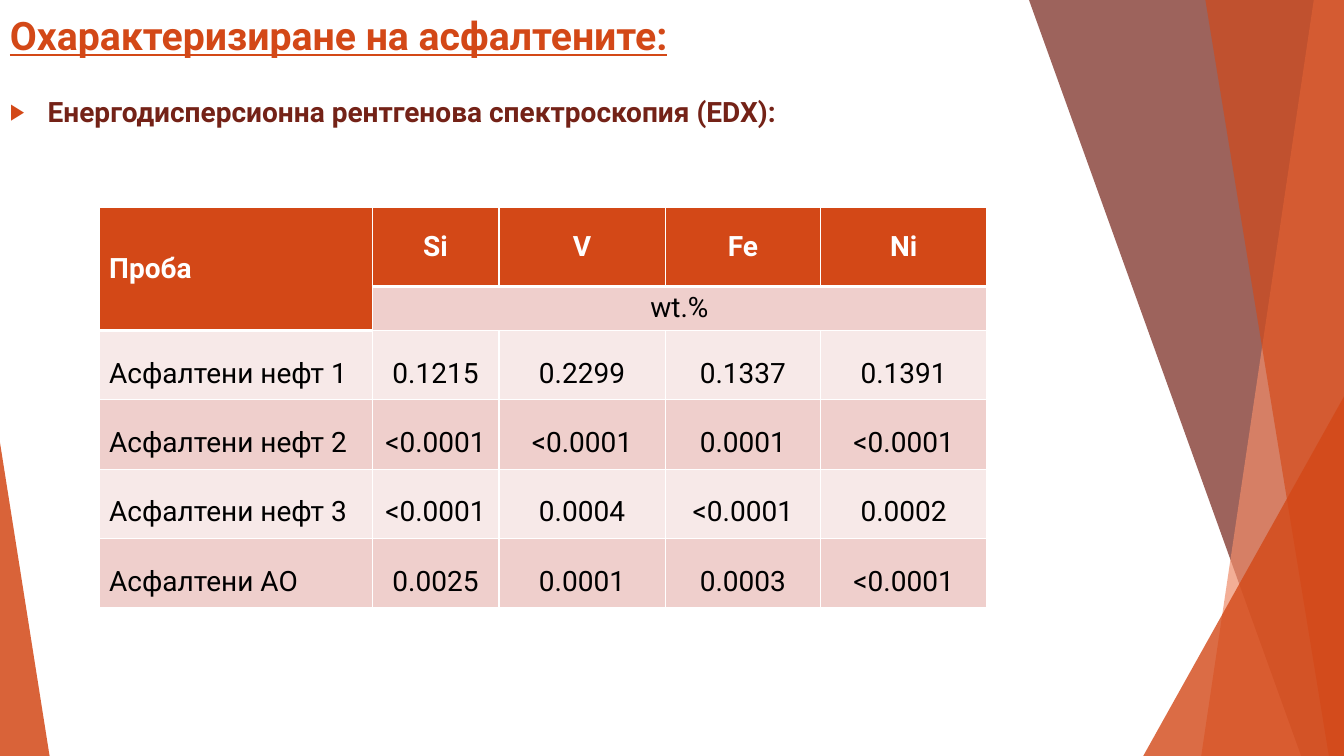
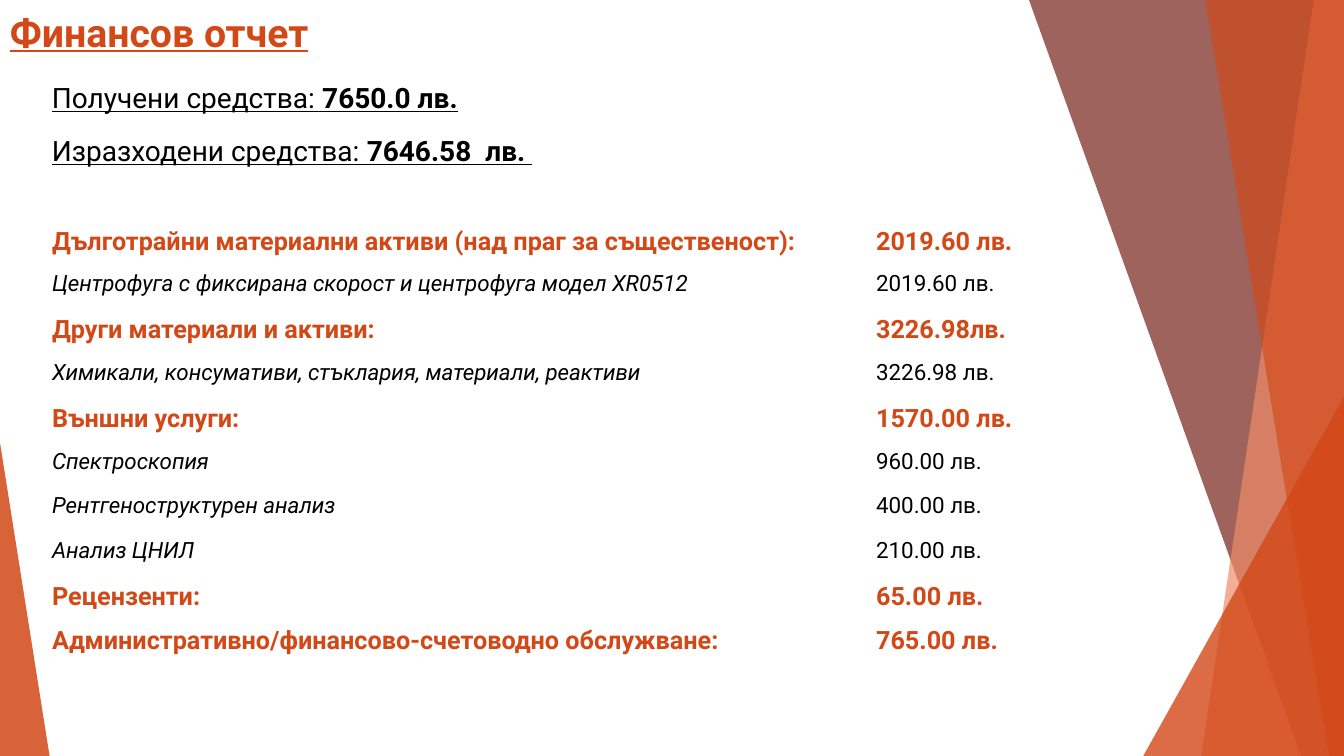
import lxml.etree
import pptx
import pptx.dml.color
import pptx.enum.shapes
import pptx.enum.text
import pptx.oxml.ns
import pptx.util

RGBColor = pptx.dml.color.RGBColor
ORANGE = RGBColor(0xD3, 0x48, 0x17)
MAROON = RGBColor(0x74, 0x22, 0x17)
SALMON = RGBColor(0xEF, 0x8C, 0x6A)
PINK = RGBColor(0xEF, 0xCF, 0xCC)
PALE = RGBColor(0xF7, 0xE9, 0xE8)
WHITE = RGBColor(0xFF, 0xFF, 0xFF)
BLACK = RGBColor(0, 0, 0)

FONT = "Roboto"
COLUMNS, ROWS = 160, 90
CENTER = pptx.enum.text.PP_ALIGN.CENTER
LEFT = pptx.enum.text.PP_ALIGN.LEFT
qn = pptx.oxml.ns.qn


def add_xml(parent, tag, **attributes):
    return lxml.etree.SubElement(parent, qn(tag), attributes)


def write(para, text, size=20, color=BLACK, bold=False, italic=False,
          underline=False, align=LEFT, spacing=None):
    """Add a span to the paragraph and set the paragraph's layout."""
    para.alignment = align
    if spacing:
        para.line_spacing = spacing
    span = para.add_run()
    span.text = text
    font = span.font
    font.name, font.size = FONT, pptx.util.Pt(size)
    font.bold, font.italic, font.underline = bold, italic, underline
    font.color.rgb = color


def add_bullet(para, char, color, indent):
    props = para._p.get_or_add_pPr()
    props.set("marL", str(indent))
    props.set("indent", str(-indent))
    add_xml(add_xml(props, "a:buClr"), "a:srgbClr", val=str(color))
    add_xml(props, "a:buSzPct", val="80000")
    add_xml(props, "a:buFont", typeface=FONT)
    add_xml(props, "a:buChar", char=char)


def draw_borders(cell, bottom):
    """Give the cell white edges; the bottom one has its own width in points."""
    props = cell._tc.get_or_add_tcPr()
    edges = (("a:lnL", 1), ("a:lnR", 1), ("a:lnB", bottom))
    for place, (tag, width) in enumerate(edges):
        line = add_xml(props, tag, w=str(pptx.util.Pt(width)))
        add_xml(add_xml(line, "a:solidFill"), "a:srgbClr", val=str(WHITE))
        props.insert(place, line)


class Slides:
    """The deck's style and its current slide; lengths are grid columns and rows."""

    def __init__(self):
        self.deck = pptx.Presentation()
        self.deck.slide_width = pptx.util.Inches(13.33)
        self.deck.slide_height = pptx.util.Inches(7.5)
        self.page = None

    def col(self, count):
        return round(self.deck.slide_width * count / COLUMNS)

    def row(self, count):
        return round(self.deck.slide_height * count / ROWS)

    def area(self, left, top, width, height):
        return self.col(left), self.row(top), self.col(width), self.row(height)

    def new_page(self, title, top):
        self.page = self.deck.slides.add_slide(self.deck.slide_layouts[6])
        self.facets()
        write(self.text_box(0, top, COLUMNS, 8).paragraphs[0], title,
              size=28, color=ORANGE, bold=True, underline=True)

    def facets(self):
        """Draw the translucent shards along both sides."""
        self.polygon([(122.5, 0), (160, 0), (160, 90), (154.9, 90)], MAROON, 70)
        self.polygon([(156.4, 0), (160, 0), (160, 90), (143, 90)], SALMON, 70)
        self.polygon([(143.5, 0), (160, 0), (160, 90), (158.2, 90)], ORANGE, 65)
        self.triangle(136.1, 47.2, 23.9, 42.8, 1, ORANGE, 80)
        self.triangle(0, 52.7, 5.9, 37.3, 0, ORANGE, 85)

    def polygon(self, corners, color, opacity):
        points = [(self.col(x), self.row(y)) for x, y in corners]
        outline = self.page.shapes.build_freeform(*points[0])
        outline.add_line_segments(points[1:])
        self.paint(outline.convert_to_shape(), color, opacity)

    def triangle(self, left, top, width, height, apex, color, opacity):
        shape = self.page.shapes.add_shape(
            pptx.enum.shapes.MSO_SHAPE.ISOSCELES_TRIANGLE,
            *self.area(left, top, width, height))
        shape.adjustments[0] = apex
        self.paint(shape, color, opacity)

    def paint(self, shape, color, opacity):
        shape.shadow.inherit = False
        shape.fill.solid()
        shape.fill.fore_color.rgb = color
        shape.line.fill.background()
        tone = shape.element.find(".//" + qn("a:srgbClr"))
        add_xml(tone, "a:alpha", val=str(opacity * 1000))

    def text_box(self, left, top, width, height):
        box = self.page.shapes.add_textbox(*self.area(left, top, width, height))
        box.text_frame.word_wrap = True
        return box.text_frame

    def table(self, left, top, widths, heights):
        frame = self.page.shapes.add_table(
            len(heights), len(widths),
            *self.area(left, top, sum(widths), sum(heights)))
        table = frame.table
        table.first_row = table.horz_banding = False
        for column, width in zip(table.columns, widths):
            column.width = self.col(width)
        for line, height in zip(table.rows, heights):
            line.height = self.row(height)
        return table

    def cell(self, cell, text, fill=None, middle=False, **style):
        if fill is None:
            cell.fill.background()
        else:
            cell.fill.solid()
            cell.fill.fore_color.rgb = fill
        if middle:
            cell.vertical_anchor = pptx.enum.text.MSO_ANCHOR.MIDDLE
        if text:
            write(cell.text_frame.paragraphs[0], text, **style)


ELEMENTS = ("Проба", "Si", "V", "Fe", "Ni")
SAMPLES = (
    ("Асфалтени нефт 1", "0.1215", "0.2299", "0.1337", "0.1391"),
    ("Асфалтени нефт 2", "<0.0001", "<0.0001", "0.0001", "<0.0001"),
    ("Асфалтени нефт 3", "<0.0001", "0.0004", "<0.0001", "0.0002"),
    ("Асфалтени АО", "0.0025", "0.0001", "0.0003", "<0.0001"),
)
FUNDS = (
    ("Получени средства: ", "7650.0 лв."),
    ("Изразходени средства: ", "7646.58  лв. "),
)
# Each expense: is it a heading, its name, its sum
EXPENSES = (
    (True, "Дълготрайни материални активи (над праг за същественост):", "2019.60 лв."),
    (False, "Центрофуга с фиксирана скорост и центрофуга модел XR0512", "2019.60 лв."),
    (True, "Други материали и активи:", "3226.98лв."),
    (False, "Химикали, консумативи, стъклария, материали, реактиви", "3226.98 лв."),
    (True, "Външни услуги:", "1570.00 лв."),
    (False, "Спектроскопия", "960.00 лв."),
    (False, "Рентгеноструктурен анализ", "400.00 лв."),
    (False, "Анализ ЦНИЛ", "210.00 лв."),
    (True, "Рецензенти:", "65.00 лв."),
    (True, "Административно/финансово-счетоводно обслужване:", "765.00 лв."),
)


def spectroscopy_page(slides):
    slides.new_page("Охарактеризиране на асфалтените:", top=0.8)
    para = slides.text_box(0, 8.7, 124.8, 6.5).paragraphs[0]
    write(para, "Енергодисперсионна рентгенова спектроскопия (EDX):",
          color=MAROON, bold=True, spacing=1.5)
    add_bullet(para, "▶", ORANGE, slides.col(4.5))

    table = slides.table(11.8, 24.7, (32.5, 15.1, 19.8, 18.5, 19.8),
                         (9.4, 5.25) + (8.26,) * len(SAMPLES))
    units = ("", "wt.%", "", "", "")
    for r, texts in enumerate((ELEMENTS, units) + SAMPLES):
        for c, text in enumerate(texts):
            cell = table.cell(r, c)
            header = r == 0 or (r == 1 and c == 0)
            fill = ORANGE if header else PINK if r % 2 else PALE
            slides.cell(cell, text, fill, middle=r != 1,
                        color=WHITE if header else BLACK, bold=header,
                        align=CENTER if c else LEFT,
                        spacing=1.5 if r > 1 else None)
            draw_borders(cell, bottom=3 if header else 1)
    table.cell(0, 0).merge(table.cell(1, 0))
    table.cell(1, 1).merge(table.cell(1, len(ELEMENTS) - 1))


def finance_page(slides):
    slides.new_page("Финансов отчет", top=0.4)
    frame = slides.text_box(5, 8.2, 60.1, 11.9)
    for index, (label, amount) in enumerate(FUNDS):
        para = frame.add_paragraph() if index else frame.paragraphs[0]
        para.space_before = pptx.util.Pt(9 if index else 0)
        write(para, label, underline=True, spacing=1.2)
        write(para, amount, underline=True, bold=True)

    table = slides.table(5, 26.4, (98.1, 26.2), (5.29,) * len(EXPENSES))
    for r, (heading, name, amount) in enumerate(EXPENSES):
        style = dict(size=18 if heading else 16, bold=heading,
                     color=ORANGE if heading else BLACK)
        slides.cell(table.cell(r, 0), name, italic=not heading, **style)
        slides.cell(table.cell(r, 1), amount, **style)


def main():
    slides = Slides()
    spectroscopy_page(slides)
    finance_page(slides)
    slides.deck.save("out.pptx")


if __name__ == "__main__":
    main()
